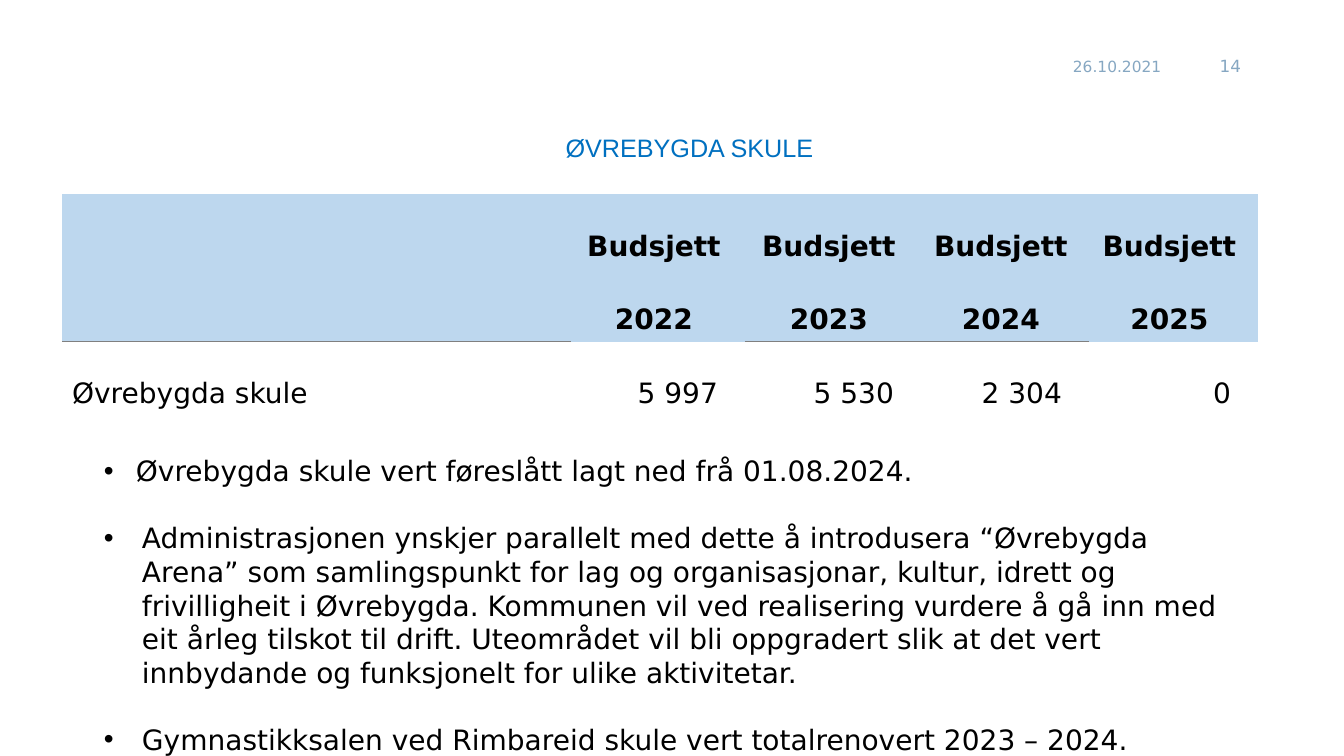
from lxml.etree import SubElement
from pptx import Presentation
from pptx.dml.color import RGBColor
from pptx.enum.text import MSO_ANCHOR, PP_ALIGN
from pptx.oxml import parse_xml
from pptx.oxml.ns import nsdecls, qn
from pptx.util import Pt

EMU_PER_PX = 914400 / 100.8
BODY_FONT = "DejaVu Sans"
TITLE_FONT = "Arial"

BLACK = RGBColor(0x00, 0x00, 0x00)
TITLE_BLUE = RGBColor(0x00, 0x70, 0xC0)
META_BLUE = RGBColor(0x86, 0xA7, 0xC2)
HEADER_BLUE = RGBColor(0xBD, 0xD7, 0xEE)
RULE_GREY = RGBColor(0x80, 0x80, 0x80)

NO_GRID_STYLE = "{2D5ABB26-0587-4C30-8999-92F81FD0307C}"
COLUMN_WIDTHS = [509, 174, 176, 168, 169]
ROW_HEIGHT = 74
RULED_COLUMNS = (0, 2, 3)
BUDGET_ROWS = [
    ["", "Budsjett", "Budsjett", "Budsjett", "Budsjett"],
    ["", "2022", "2023", "2024", "2025"],
    ["Øvrebygda skule", "5 997", "5 530", "2 304", "0"],
]

# Each point: text and hanging indent in px
POINTS = [
    ("Øvrebygda skule vert føreslått lagt ned frå 01.08.2024.", 32),
    ("Administrasjonen ynskjer parallelt med dette å introdusera “Øvrebygda "
     "Arena” som samlingspunkt for lag og organisasjonar, kultur, idrett og "
     "frivilligheit i Øvrebygda. Kommunen vil ved realisering vurdere å gå inn "
     "med eit årleg tilskot til drift. Uteområdet vil bli oppgradert slik at det "
     "vert innbydande og funksjonelt for ulike aktivitetar.", 38),
    ("Gymnastikksalen ved Rimbareid skule vert totalrenovert 2023 – 2024.", 38),
]


def px(length):
    return round(length * EMU_PER_PX)


def write(paragraph, text, size, color, font=BODY_FONT, bold=False,
          align=PP_ALIGN.LEFT):
    paragraph.alignment = align
    run = paragraph.add_run()
    run.text = text
    run.font.name = font
    run.font.size = Pt(size)
    run.font.bold = bold
    run.font.color.rgb = color


def add_frame(slide, left, top, width, height, anchor=MSO_ANCHOR.TOP):
    frame = slide.shapes.add_textbox(
        px(left), px(top), px(width), px(height)).text_frame
    frame.word_wrap = True
    frame.vertical_anchor = anchor
    return frame


def add_bottom_rule(cell):
    rule = parse_xml(
        f'<a:lnB {nsdecls("a")} w="9525"><a:solidFill>'
        f'<a:srgbClr val="{RULE_GREY}"/></a:solidFill></a:lnB>')
    cell._tc.get_or_add_tcPr().insert(0, rule)


def fill_cell(cell, text, row, column):
    is_header = row < 2
    cell.vertical_anchor = MSO_ANCHOR.BOTTOM
    if is_header:
        cell.fill.solid()
        cell.fill.fore_color.rgb = HEADER_BLUE
        align, right_margin = PP_ALIGN.CENTER, 18
    else:
        cell.fill.background()
        align, right_margin = PP_ALIGN.RIGHT, 27
    if column == 0:
        align, right_margin = PP_ALIGN.LEFT, 10
    cell.margin_right = px(right_margin)
    cell.margin_bottom = px(6 if row else 5)
    if text:
        write(cell.text_frame.paragraphs[0], text, 20, BLACK,
              bold=is_header, align=align)
    if row == 1 and column in RULED_COLUMNS:
        add_bottom_rule(cell)


def add_budget_table(slide, left, top):
    budget = slide.shapes.add_table(
        len(BUDGET_ROWS), len(COLUMN_WIDTHS), px(left), px(top),
        px(sum(COLUMN_WIDTHS)), px(ROW_HEIGHT * len(BUDGET_ROWS))).table
    budget.first_row = False
    budget.horz_banding = False
    budget._tbl.tblPr.find(qn("a:tableStyleId")).text = NO_GRID_STYLE
    for column, width in zip(budget.columns, COLUMN_WIDTHS):
        column.width = px(width)
    for row, texts in enumerate(BUDGET_ROWS):
        budget.rows[row].height = px(ROW_HEIGHT)
        for column, text in enumerate(texts):
            fill_cell(budget.cell(row, column), text, row, column)


def add_points(slide, left, top, width, height):
    frame = add_frame(slide, left, top, width, height)
    frame.margin_right = px(34)
    for index, (text, indent) in enumerate(POINTS):
        point = frame.add_paragraph() if index else frame.paragraphs[0]
        properties = point._p.get_or_add_pPr()
        properties.set("marL", str(px(indent)))
        properties.set("indent", str(-px(indent)))
        SubElement(properties, qn("a:buFont"), typeface="Arial")
        SubElement(properties, qn("a:buChar"), char="•")
        if index:
            point.space_before = Pt(23.8)
        write(point, text, 20, BLACK)


def main():
    presentation = Presentation()
    presentation.slide_width = px(1344)
    presentation.slide_height = px(756)
    slide = presentation.slides.add_slide(presentation.slide_layouts[6])

    # Date and slide number
    date = add_frame(slide, 1063, 46, 116, 40, MSO_ANCHOR.MIDDLE)
    write(date.paragraphs[0], "26.10.2021", 11, META_BLUE)
    number = add_frame(slide, 1193, 46, 58, 40, MSO_ANCHOR.MIDDLE)
    write(number.paragraphs[0], "14", 12, META_BLUE, align=PP_ALIGN.RIGHT)

    # Title
    title = add_frame(slide, 127, 127, 1125, 194)
    write(title.paragraphs[0], "ØVREBYGDA SKULE", 18, TITLE_BLUE,
          font=TITLE_FONT, align=PP_ALIGN.CENTER)

    # Budget and explanation
    add_budget_table(slide, 62, 194)
    add_points(slide, 94, 449, 1174, 315)

    presentation.save("out.pptx")


if __name__ == "__main__":
    main()
